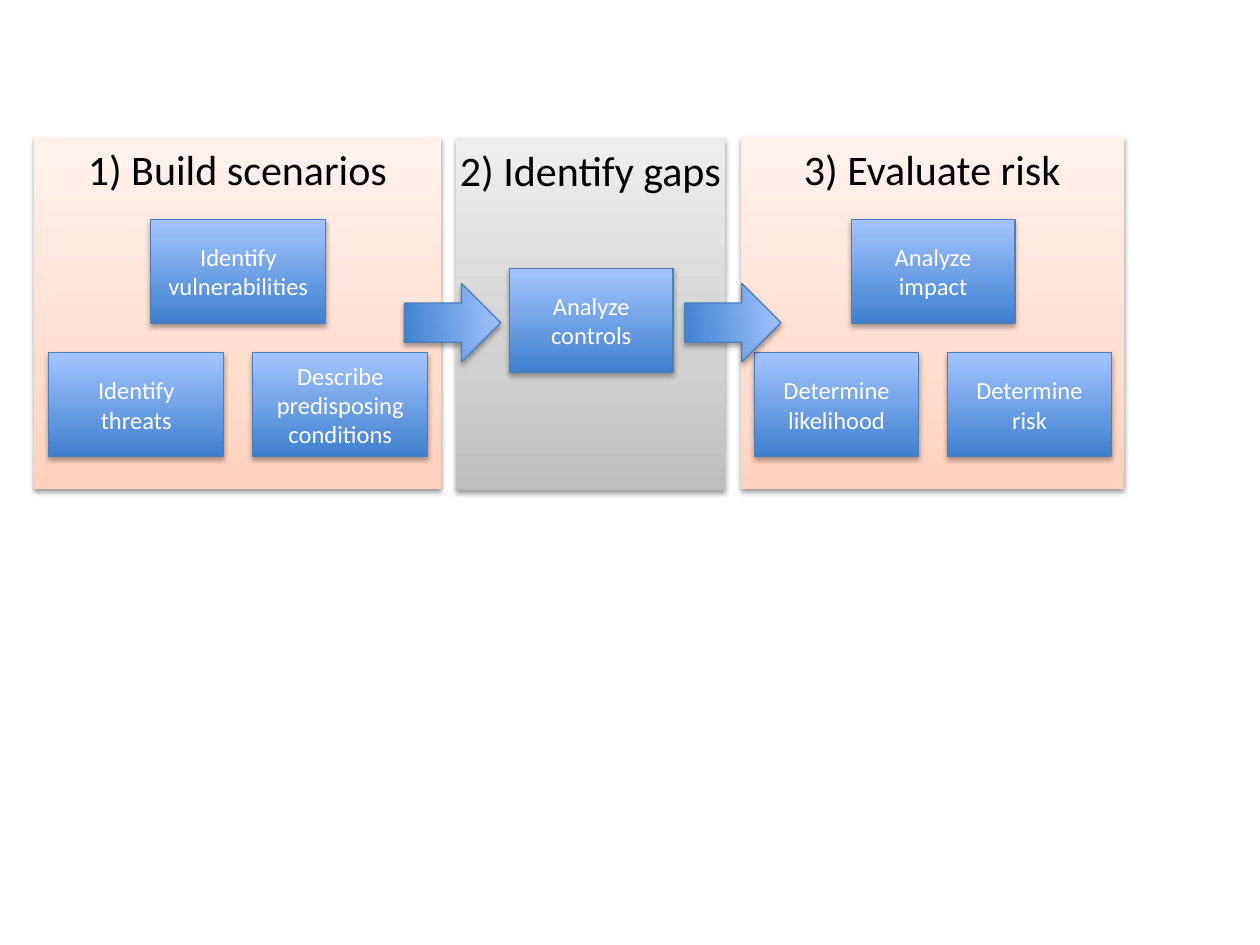
import pptx
import pptx.util
import pptx.oxml
import pptx.oxml.ns
import pptx.dml.color
import pptx.enum.shapes
import pptx.enum.text

Pt = pptx.util.Pt
RGB = pptx.dml.color.RGBColor.from_string
KIND = pptx.enum.shapes.MSO_SHAPE

# Content: boxes are (text, column offset from panel centre, top)
TOP, MID, LOW = 125.3, 153.4, 201.6
PANELS = [
    dict(title="1) Build scenarios", left=19.4, top=78.5, width=232.6,
         tint="peach", size=100, title_w=187.2,
         boxes=[("Identify threats", -0.5, LOW),
                ("Identify vulnerabilities", 0, TOP),
                ("Describe predisposing conditions", 0.5, LOW)]),
    dict(title="2) Identify gaps", left=260.6, top=79.2, width=153.6,
         tint="gray", size=93.6, title_w=165.6,
         boxes=[("Analyze controls", 0, MID)]),
    dict(title="3) Evaluate risk", left=423.3, top=78.5, width=218.8,
         tint="peach", size=93.6, title_w=164.2,
         boxes=[("Determine likelihood", -0.5, LOW),
                ("Analyze impact", 0, TOP),
                ("Determine risk", 0.5, LOW)]),
]
ARROWS = [231.1, 391.3]
PANEL_H, BOX_H, TITLE_H, GAP = 200.9, 59.3, 36, 16.6
ARROW_TOP, ARROW_W, ARROW_H = 162, 55, 44.8

THEME = dict(
    font="Calibri", head=24, body=14, ink="000000", pale="FFFFFF", edge="4B7EBC",
    peach=[(0, "FFD2BD"), (35, "FFDED0"), (100, "FFF2ED")],
    gray=[(0, "BDBDBD"), (35, "D1D1D1"), (100, "EEEEEE")],
    blue=[(0, "3F80CE"), (100, "A4C4FF")],
)

deck = pptx.Presentation()
deck.slide_width, deck.slide_height = Pt(720), Pt(540)
slide = deck.slides.add_slide(deck.slide_layouts[6])


def write(frame, text, size, color, wrap=True):
    frame.word_wrap = wrap
    para = frame.paragraphs[0]
    para.alignment = pptx.enum.text.PP_ALIGN.CENTER
    run = para.add_run()
    run.text = text
    run.font.name, run.font.size = THEME["font"], Pt(size)
    run.font.color.rgb = RGB(color)


def shape(kind, left, top, width, height, tint, angle=270, edge=None,
          drop=1.8, alpha=35):
    item = slide.shapes.add_shape(kind, Pt(left), Pt(top), Pt(width), Pt(height))
    props = item._element.spPr
    space = pptx.oxml.ns.nsdecls("a")
    # Gradient fill
    stops = "".join(f'<a:gs pos="{pos * 1000}"><a:srgbClr val="{color}"/></a:gs>'
                    for pos, color in THEME[tint])
    props.append(pptx.oxml.parse_xml(
        f'<a:gradFill {space} rotWithShape="1"><a:gsLst>{stops}</a:gsLst>'
        f'<a:lin ang="{angle * 60000}" scaled="0"/></a:gradFill>'))
    # Outline
    if edge:
        item.line.color.rgb = RGB(edge)
        item.line.width = Pt(0.75)
    else:
        item.line.fill.background()
    # Soft shadow straight below
    item.shadow.inherit = False
    props.find(pptx.oxml.ns.qn("a:effectLst")).append(pptx.oxml.parse_xml(
        f'<a:outerShdw {space} blurRad="{Pt(3.1)}" dist="{Pt(drop)}" '
        f'dir="5400000" rotWithShape="0"><a:srgbClr val="000000">'
        f'<a:alpha val="{alpha * 1000}"/></a:srgbClr></a:outerShdw>'))
    return item


# Panels with their boxes and titles
for panel in PANELS:
    left, top, width, size = (panel[k] for k in ("left", "top", "width", "size"))
    mid = left + width / 2
    shape(KIND.RECTANGLE, left, top, width, PANEL_H, panel["tint"],
          drop=1.6, alpha=38)
    for text, col, row in panel["boxes"]:
        box = shape(KIND.RECTANGLE, mid + col * (size + GAP) - size / 2 + 0.5, row,
                    size, BOX_H, "blue", edge=THEME["edge"])
        box.text_frame.vertical_anchor = pptx.enum.text.MSO_ANCHOR.MIDDLE
        write(box.text_frame, text, THEME["body"], THEME["pale"])
    wide = panel["title_w"]
    title = slide.shapes.add_textbox(Pt(mid - wide / 2), Pt(top), Pt(wide), Pt(TITLE_H))
    title.text_frame.auto_size = pptx.enum.text.MSO_AUTO_SIZE.SHAPE_TO_FIT_TEXT
    write(title.text_frame, panel["title"], THEME["head"], THEME["ink"], wrap=False)

# Arrows between panels
for left in ARROWS:
    shape(KIND.RIGHT_ARROW, left, ARROW_TOP, ARROW_W, ARROW_H, "blue",
          angle=354, edge=THEME["edge"])

deck.save("out.pptx")
